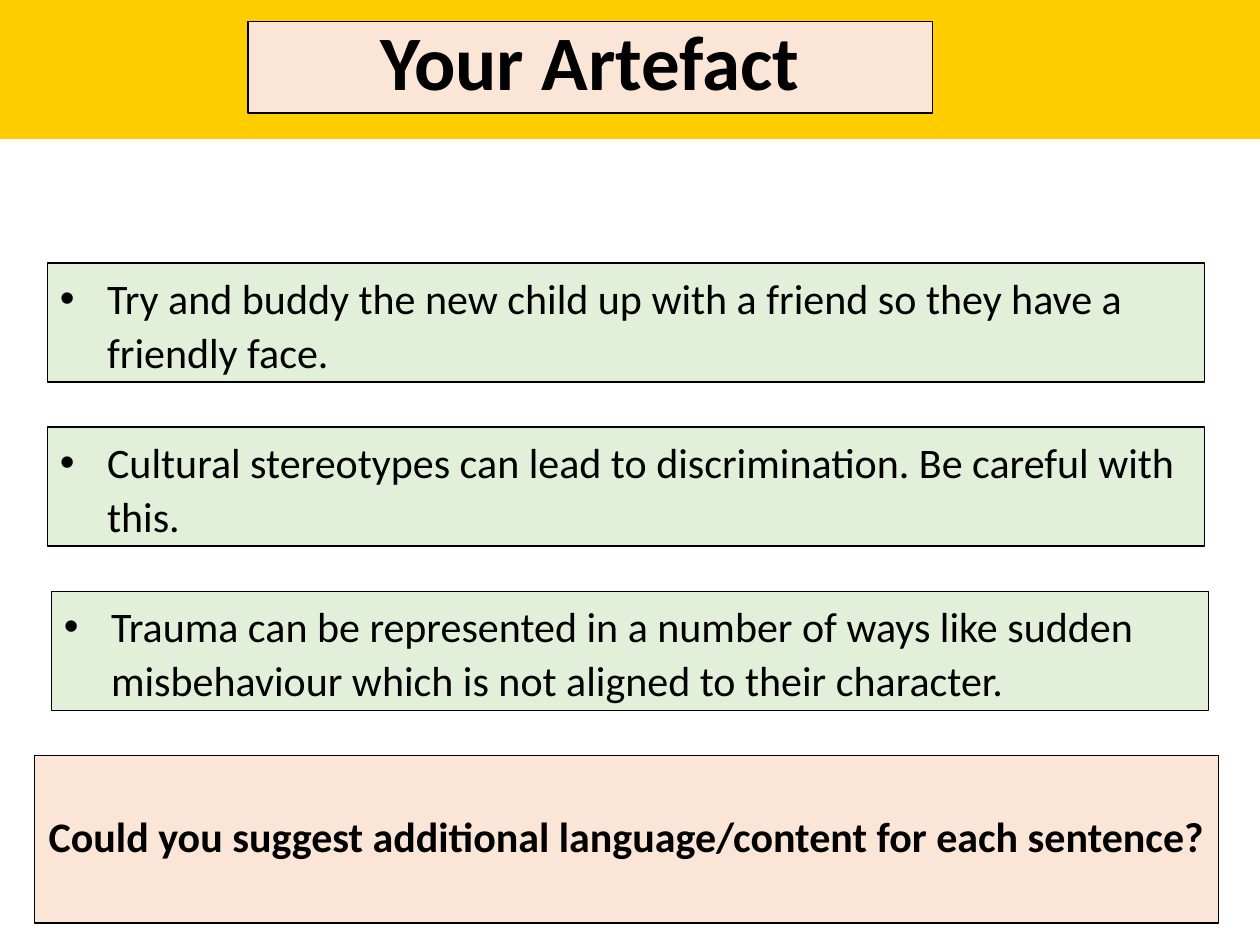
from lxml import etree
from pptx import Presentation
from pptx.dml.color import RGBColor
from pptx.enum.shapes import MSO_SHAPE
from pptx.enum.text import MSO_ANCHOR, MSO_AUTO_SIZE, PP_ALIGN
from pptx.oxml.ns import qn
from pptx.util import Cm, Pt

RECT = MSO_SHAPE.RECTANGLE
TOP, MIDDLE, BOTTOM = MSO_ANCHOR.TOP, MSO_ANCHOR.MIDDLE, MSO_ANCHOR.BOTTOM
LEFT, CENTER = PP_ALIGN.LEFT, PP_ALIGN.CENTER
GROW = MSO_AUTO_SIZE.SHAPE_TO_FIT_TEXT

FONT = "Calibri"
COLORS = {
    "band": "FFCD00",
    "peach": "FBE5D6",
    "green": "E2F0D9",
    "ink": "000000",
}
# Left edge in cm and wording of each tip
TIPS = [
    (0.96, "Try and buddy the new child up with a friend so they have a friendly face."),
    (0.96, "Cultural stereotypes can lead to discrimination. Be careful with this."),
    (1.04, "Trauma can be represented in a number of ways like sudden "
           "misbehaviour which is not aligned to their character."),
]
TIP_TOP, TIP_STEP = 5.3, 3.31


def color(name):
    return RGBColor.from_string(COLORS[name])


def add_box(slide, left, top, width, height, fill, border=True):
    box = slide.shapes.add_shape(RECT, Cm(left), Cm(top), Cm(width), Cm(height))
    box.shadow.inherit = False
    box.fill.solid()
    box.fill.fore_color.rgb = color(fill)
    if border:
        box.line.color.rgb = color("ink")
        box.line.width = Pt(0.75)
    else:
        box.line.fill.background()
    return box


def add_text(box, text, size, anchor, align, spacing, bold=False):
    frame = box.text_frame
    frame.word_wrap = True
    frame.vertical_anchor = anchor
    para = frame.paragraphs[0]
    para.alignment = align
    para.line_spacing = spacing
    run = para.add_run()
    run.text = text
    run.font.name = FONT
    run.font.size = Pt(size)
    run.font.bold = bold
    run.font.color.rgb = color("ink")
    return para


def add_bullet(para, indent):
    props = para._p.get_or_add_pPr()
    props.set("marL", str(indent))
    props.set("indent", str(-indent))
    etree.SubElement(props, qn("a:buFont")).set("typeface", "Arial")
    etree.SubElement(props, qn("a:buChar")).set("char", "•")


def add_tip(slide, left, top, text):
    box = add_box(slide, left, top, 23.32, 2.4, "green")
    para = add_text(box, text, 24, TOP, LEFT, 1.07)
    add_bullet(para, Cm(0.95))
    para.space_after = Pt(8)
    box.text_frame.auto_size = GROW


def main():
    deck = Presentation()
    deck.slide_width, deck.slide_height = Cm(25.4), Cm(19.05)
    slide = deck.slides.add_slide(deck.slide_layouts[6])

    # Header band and title
    add_box(slide, 0, 0, 25.4, 2.8, "band", border=False)
    title = add_box(slide, 5, 0.43, 13.8, 1.85, "peach")
    add_text(title, "Your Artefact", 44, BOTTOM, CENTER, 0.9, bold=True)

    # Tips, evenly stacked
    for row, (left, text) in enumerate(TIPS):
        add_tip(slide, left, TIP_TOP + row * TIP_STEP, text)

    # Closing question
    prompt = add_box(slide, 0.69, 15.23, 23.88, 3.38, "peach")
    add_text(prompt, "Could you suggest additional language/content for each sentence?",
             24, MIDDLE, CENTER, 0.9, bold=True)

    deck.save("out.pptx")


if __name__ == "__main__":
    main()
